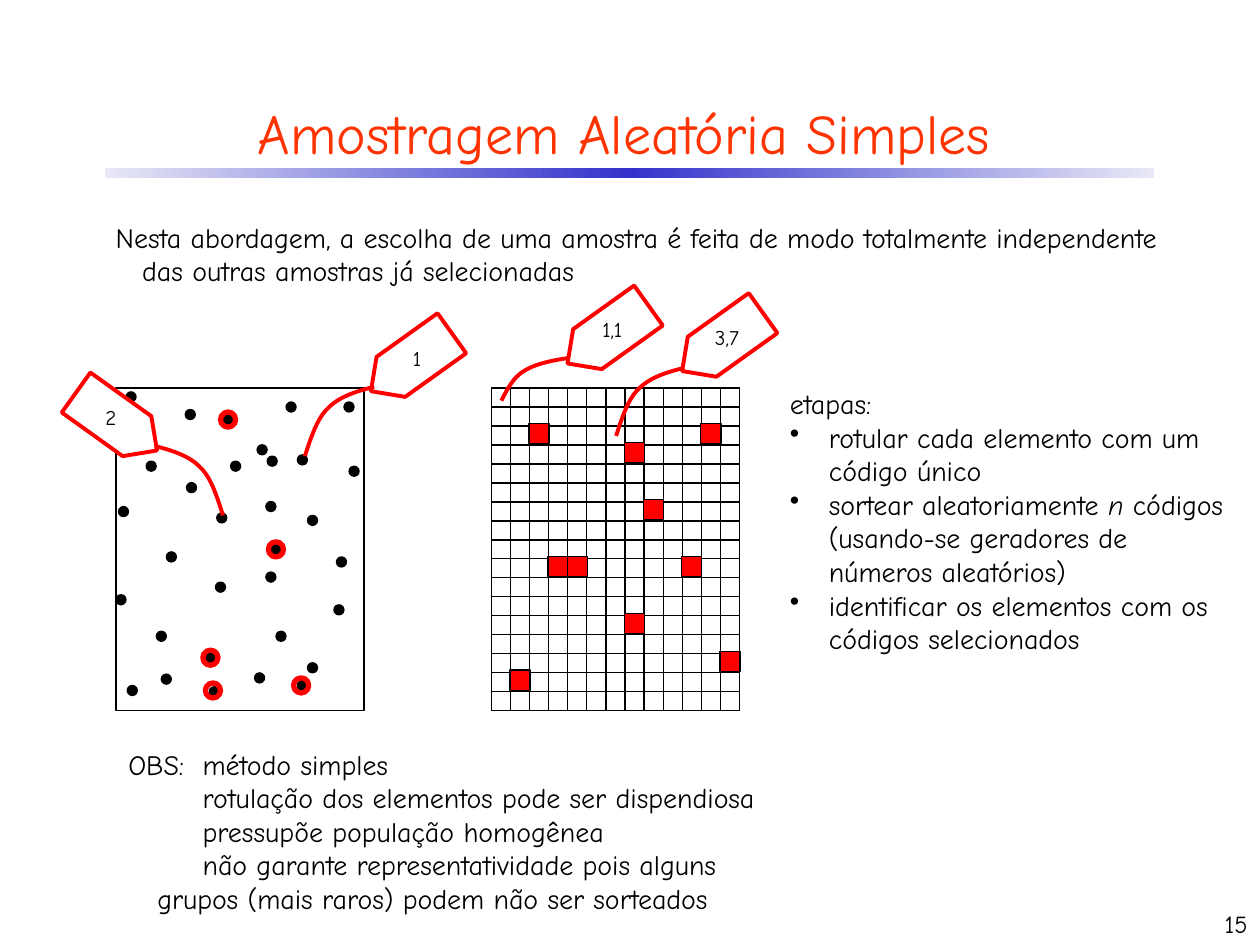
"""Builds the slide on simple random sampling."""
import copy

import pptx
import pptx.dml.color
import pptx.enum.shapes
import pptx.enum.text
import pptx.oxml.ns
import pptx.oxml.xmlchemy
import pptx.util

RGB = pptx.dml.color.RGBColor
SHAPE = pptx.enum.shapes.MSO_SHAPE
ALIGN = pptx.enum.text.PP_ALIGN
ANCHOR = pptx.enum.text.MSO_ANCHOR
Inches = pptx.util.Inches
Pt = pptx.util.Pt
new_element = pptx.oxml.xmlchemy.OxmlElement

FONT = "Comic Neue"
BLACK = RGB(0x00, 0x00, 0x00)
WHITE = RGB(0xFF, 0xFF, 0xFF)
RED = RGB(0xFF, 0x00, 0x00)
ORANGE = RGB(0xFF, 0x33, 0x00)
BLUE = RGB(0x33, 0x33, 0xCC)
PALE = RGB(0xE8, 0xE8, 0xF6)

TITLE = [("Amostragem Aleatória Simples", 0, 0, "")]
INTRO = [("Nesta abordagem, a escolha de uma amostra é feita de modo totalmente "
          "independente das outras amostras já selecionadas", 0.21, -0.21, "")]
STEPS = [
    ("etapas:", 0, 0, ""),
    ("rotular cada elemento com um código único", 0.31, -0.31, "•"),
    (["sortear aleatoriamente ", "n",
      " códigos (usando-se geradores de números aleatórios)"], 0.31, -0.31, "•"),
    ("identificar os elementos com os códigos selecionados", 0.31, -0.31, "•"),
]
NOTES = [
    ("OBS:\tmétodo simples", 0.59, -0.59, ""),
    ("rotulação dos elementos pode ser dispendiosa", 0.59, 0, ""),
    ("pressupõe população homogênea", 0.59, 0, ""),
    ("não garante representatividade pois alguns\v"
     "grupos (mais raros) podem não ser sorteados", 0.23, 0.36, ""),
]

FRAME_LEFT, GRID_LEFT, TOP = 0.92, 3.9, 3.08
COLUMNS, ROWS = 13, 17
WIDTH, HEIGHT = 1.97, 2.56
CELL_W, CELL_H = WIDTH / COLUMNS, HEIGHT / ROWS
DOT, RING, SQUARE = 0.08, 0.12, 0.16

POPULATION = [
    (1.2, 3.7), (1.52, 3.87), (1.76, 4.11), (1.36, 4.42), (1.75, 4.66), (1.28, 5.05),
    (1.67, 5.22), (2.06, 5.38), (2.23, 5.05), (2.4, 5.44), (2.48, 5.3), (2.19, 4.36),
    (2.15, 4.58), (2.69, 4.84), (2.48, 4.13), (1.87, 3.7), (2.4, 3.65), (2.15, 4.02),
    (0.98, 4.06), (0.96, 4.76), (1.32, 5.39), (1.05, 5.48), (1.7, 5.49), (2.71, 4.46),
    (2.77, 3.23), (1.81, 3.33), (2.16, 3.66), (2.08, 3.57), (1.04, 3.15), (1.51, 3.29),
    (2.31, 3.23), (2.81, 3.74),
]
DRAWN_DOTS = [(1.81, 3.33), (2.19, 4.36), (1.67, 5.22), (2.39, 5.44), (1.69, 5.48)]
DRAWN_CELLS = [(2, 2), (7, 3), (3, 9), (8, 6), (12, 14), (1, 15), (7, 12), (10, 9),
               (11, 2), (4, 9)]

TAG_W, TAG_H = 0.79, 0.39
TAGS = [
    ("1", (2.87, 2.68), 144.4, (2.42, 3.62), (2.97, 3.07), (3.31, 2.84)),
    ("2", (0.53, 3.15), 35.6, (1.77, 4.09), (1.23, 3.54), (0.88, 3.31)),
    ("3,7", (5.34, 2.52), 144.4, (4.89, 3.46), (5.43, 2.92), (5.77, 2.68)),
    ("1,1", (4.43, 2.46), 144.4, (3.98, 3.18), (4.52, 2.84), (4.86, 2.61)),
]
STRING = [[(0, 0), (0.09, 0.28), (0.18, 0.56), (0.35, 0.71)],
          [(0.35, 0.71), (0.52, 0.87), (0.76, 0.94), (1, 1)]]
STRING_STEPS = 10

deck = pptx.Presentation()
deck.slide_width, deck.slide_height = Inches(10), Inches(7.5)
slide = deck.slides.add_slide(deck.slide_layouts[6])
shapes = slide.shapes


def paint(shape, fill, line, weight):
    shape.shadow.inherit = False
    if fill is None:
        shape.fill.background()
    else:
        shape.fill.solid()
        shape.fill.fore_color.rgb = fill
    shape.line.color.rgb = line
    shape.line.width = Pt(weight)


def add_preset(kind, left, top, width, height, fill=None, line=BLACK, weight=0.75):
    shape = shapes.add_shape(kind, *map(Inches, (left, top, width, height)))
    paint(shape, fill, line, weight)
    return shape


def add_centred(kind, centre, size, **style):
    return add_preset(kind, centre[0] - size / 2, centre[1] - size / 2, size, size, **style)


def add_line(x1, y1, x2, y2):
    line = shapes.add_connector(pptx.enum.shapes.MSO_CONNECTOR.STRAIGHT,
                                *map(Inches, (x1, y1, x2, y2)))
    line.line.color.rgb = BLACK
    line.line.width = Pt(0.75)
    line._element.spPr.append(new_element("a:effectLst"))


def add_text(place, paragraphs, size=16, color=BLACK, align=ALIGN.LEFT,
             anchor=ANCHOR.TOP, wrap=True):
    frame = shapes.add_textbox(*map(Inches, place)).text_frame
    frame.word_wrap, frame.vertical_anchor = wrap, anchor
    for index, (content, margin, indent, bullet) in enumerate(paragraphs):
        paragraph = frame.paragraphs[0] if index == 0 else frame.add_paragraph()
        paragraph.alignment = align
        properties = paragraph._p.get_or_add_pPr()
        properties.set("marL", str(int(Inches(margin))))
        properties.set("indent", str(int(Inches(indent))))
        if bullet:
            mark = new_element("a:buChar")
            mark.set("char", bullet)
            properties.append(mark)
        for piece in [content] if isinstance(content, str) else content:
            for number, part in enumerate(piece.split("\v")):
                if number:
                    paragraph.add_line_break()
                run = paragraph.add_run()
                run.text = part
                run.font.name, run.font.size = FONT, Pt(size)
                run.font.color.rgb = color
                run.font.italic = piece == "n"


def add_string(start, end):
    points = []
    for curve in STRING:
        for step in range(STRING_STEPS + 1):
            t = step / STRING_STEPS
            weights = ((1 - t) ** 3, 3 * t * (1 - t) ** 2, 3 * t * t * (1 - t), t ** 3)
            points.append(tuple(
                Inches(start[axis] + (end[axis] - start[axis])
                       * sum(w * p[axis] for w, p in zip(weights, curve)))
                for axis in (0, 1)))
    builder = shapes.build_freeform(*points[0])
    builder.add_line_segments(points[1:], close=False)
    paint(builder.convert_to_shape(), None, RED, 2.25)


rule = add_preset(SHAPE.RECTANGLE, 0.83, 1.33, 8.33, 0.08)
rule.line.fill.background()
rule.fill.gradient()
rule.fill.gradient_angle = 0
stop_list = rule._element.spPr.find(".//" + pptx.oxml.ns.qn("a:gsLst"))
stop_list.append(copy.deepcopy(stop_list[-1]))
for stop, position, color in zip(rule.fill.gradient_stops, (0, 0.5, 1), (PALE, BLUE, PALE)):
    stop.position, stop.color.rgb = position, color

add_text((0.33, 0.67, 9.25, 0.75), TITLE, 32, ORANGE, ALIGN.CENTER, ANCHOR.MIDDLE)
add_text((0.82, 1.7, 8.51, 0.64), INTRO)

for row in range(ROWS + 1):
    add_line(GRID_LEFT, TOP + row * CELL_H, GRID_LEFT + WIDTH, TOP + row * CELL_H)
for column in range(COLUMNS + 1):
    add_line(GRID_LEFT + column * CELL_W, TOP, GRID_LEFT + column * CELL_W, TOP + HEIGHT)

add_text((7.92, 7, 2.08, 0.5), [("15", 0, 0, "")], 14, align=ALIGN.RIGHT, anchor=ANCHOR.BOTTOM)

add_preset(SHAPE.RECTANGLE, FRAME_LEFT, TOP, WIDTH, HEIGHT)
for centre in POPULATION:
    add_centred(SHAPE.OVAL, centre, DOT, fill=BLACK)

add_text((6.17, 3.02, 3.64, 2.26), STEPS)

for label, (left, top), angle, start, end, centre in TAGS:
    tag = add_preset(SHAPE.PENTAGON, left, top, TAG_W, TAG_H, WHITE, RED, 2.25)
    tag.rotation = angle
    add_string(start, end)
    add_text((centre[0] - 0.23, centre[1] - 0.15, 0.46, 0.3), [(label, 0, 0, "")], 12,
             align=ALIGN.CENTER, wrap=False)

for column, row in DRAWN_CELLS:
    centre = (GRID_LEFT + (column + 0.5) * CELL_W, TOP + (row + 0.4) * CELL_H)
    add_centred(SHAPE.RECTANGLE, centre, SQUARE, fill=RED)
for centre in DRAWN_DOTS:
    add_centred(SHAPE.OVAL, centre, RING, line=RED, weight=3)

add_text((0.92, 5.88, 5.83, 1.45), NOTES)

deck.save("out.pptx")
